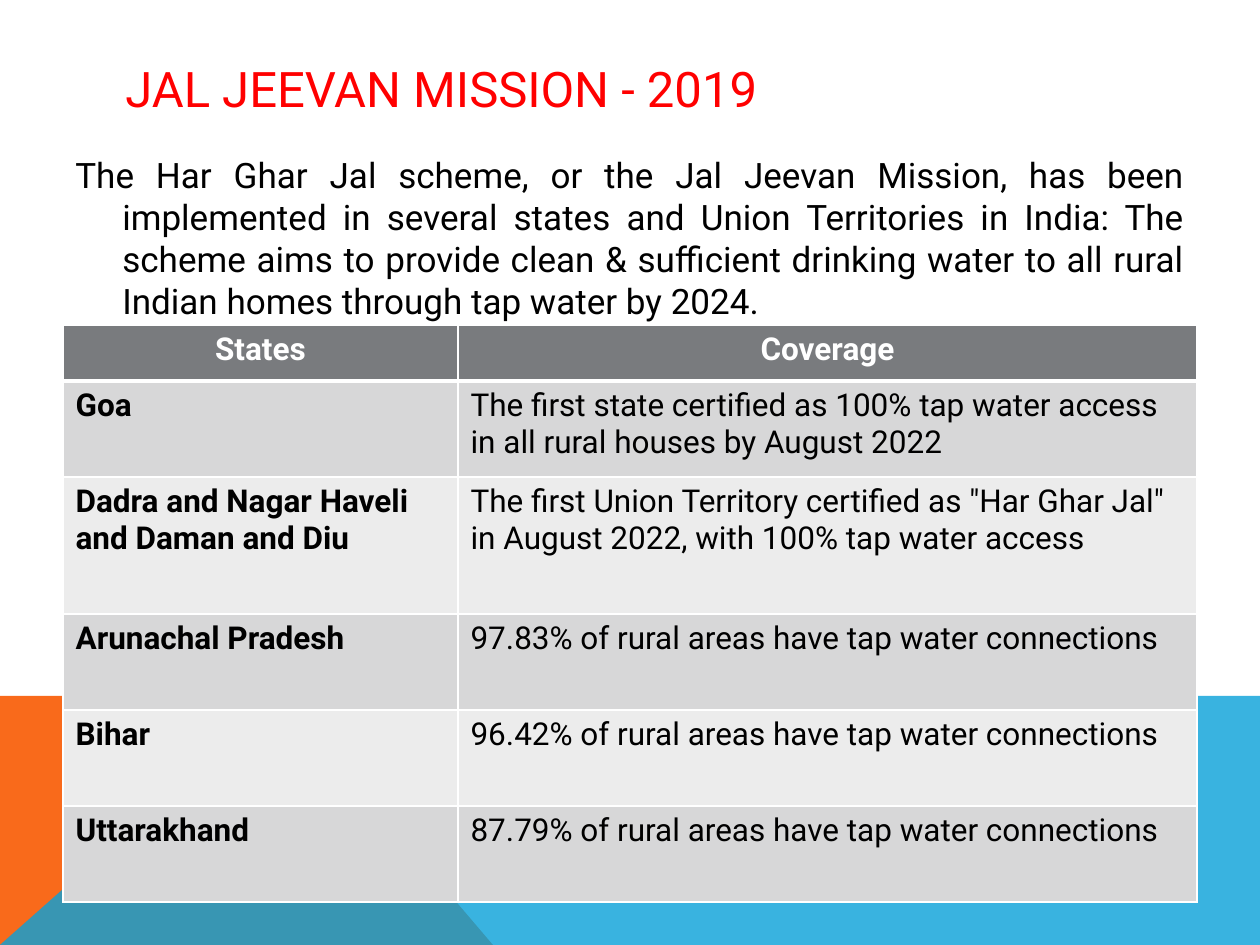
from lxml import etree
from pptx import Presentation
from pptx import util as u
from pptx.dml.color import RGBColor
from pptx.enum import text
from pptx.oxml.ns import qn

SCALE = 914400 / 126  # EMU per px
FONT = "Roboto"
WHITE, BLACK, RED = "FFFFFF", "000000", "FF0000"
ORANGE, BLUE = "F96A1B", "08A1D9"
HEADER, BAND_DARK, BAND_LIGHT = "797B7E", "D7D7D8", "ECECEC"

INTRO = (
    "The Har Ghar Jal scheme, or the Jal Jeevan Mission, has been implemented "
    "in several states and Union Territories in India: The scheme aims to provide "
    "clean & sufficient drinking water to all rural Indian homes through tap water by 2024."
)
ROWS = [
    ("States", "Coverage"),
    ("Goa", "The first state certified as 100% tap water access in all rural houses by August 2022"),
    ("Dadra and Nagar Haveli and Daman and Diu",
     'The first Union Territory certified as "Har Ghar Jal" in August 2022, with 100% tap water access'),
    ("Arunachal Pradesh", "97.83% of rural areas have tap water connections"),
    ("Bihar", "96.42% of rural areas have tap water connections"),
    ("Uttarakhand", "87.79% of rural areas have tap water connections"),
]
COL_WIDTHS = [395, 739]
ROW_HEIGHTS = [56, 96, 137, 96, 96, 96]


def px(n):
    return u.Emu(round(n * SCALE))


def rgb(color):
    return RGBColor.from_string(color)


def add_run(p, words, size, color, bold=False):
    r = p.add_run()
    r.text = words
    r.font.name = FONT
    r.font.size = u.Pt(size)
    r.font.bold = bold
    r.font.color.rgb = rgb(color)


def add_polygon(s, points, color, opacity=100):
    builder = s.shapes.build_freeform(*points[0], scale=SCALE)
    builder.add_line_segments(points[1:], close=True)
    sp = builder.convert_to_shape()
    sp.shadow.inherit = False
    sp.fill.solid()
    sp.fill.fore_color.rgb = rgb(color)
    sp.line.fill.background()
    if opacity < 100:
        clr = sp._element.spPr.find(qn("a:solidFill"))[0]
        etree.SubElement(clr, qn("a:alpha"), val=str(opacity * 1000))


def add_textbox(s, x, y, w, h, anchor):
    tf = s.shapes.add_textbox(px(x), px(y), px(w), px(h)).text_frame
    tf.word_wrap = True
    tf.vertical_anchor = anchor
    return tf.paragraphs[0]


def set_borders(cell, bottom):
    tc_pr = cell._tc.get_or_add_tcPr()
    for side, width in (("L", 1), ("R", 1), ("T", 1), ("B", bottom)):
        ln = etree.SubElement(tc_pr, qn(f"a:ln{side}"), w=str(u.Pt(width)))
        fill = etree.SubElement(ln, qn("a:solidFill"))
        etree.SubElement(fill, qn("a:srgbClr"), val=WHITE)


def add_coverage_table(s, x, y):
    table = s.shapes.add_table(
        len(ROWS), len(COL_WIDTHS), px(x), px(y),
        px(sum(COL_WIDTHS)), px(sum(ROW_HEIGHTS))).table
    for col, width in zip(table.columns, COL_WIDTHS):
        col.width = px(width)
    for i, (row, height) in enumerate(zip(table.rows, ROW_HEIGHTS)):
        row.height = px(height)
        is_header = i == 0
        band = HEADER if is_header else BAND_DARK if i % 2 else BAND_LIGHT
        for j, cell in enumerate(row.cells):
            set_borders(cell, bottom=3 if is_header else 1)
            cell.fill.solid()
            cell.fill.fore_color.rgb = rgb(band)
            p = cell.text_frame.paragraphs[0]
            if is_header:
                p.alignment = text.PP_ALIGN.CENTER
            add_run(p, ROWS[i][j], 18, WHITE if is_header else BLACK,
                    bold=is_header or j == 0)


def main():
    prs = Presentation()
    prs.slide_width, prs.slide_height = px(1260), px(945)
    s = prs.slides.add_slide(prs.slide_layouts[6])

    # Coloured band along the bottom
    add_polygon(s, [(0, 945), (0, 696), (281, 696), (493, 945)], ORANGE)
    add_polygon(s, [(0, 945), (281, 696), (1260, 696), (1260, 945)], BLUE, opacity=80)

    # Title
    p = add_textbox(s, 113, 50, 1036, 76, text.MSO_ANCHOR.MIDDLE)
    add_run(p, "JAL JEEVAN MISSION - 2019", 28, RED)

    # Introduction with a hanging indent, ending just above the table
    p = add_textbox(s, 63, 147, 1134, 178, text.MSO_ANCHOR.TOP)
    p.alignment = text.PP_ALIGN.JUSTIFY
    p.line_spacing = 1.0
    p_pr = p._p.get_or_add_pPr()
    p_pr.set("marL", str(px(47)))
    p_pr.set("indent", str(px(-47)))
    add_run(p, INTRO, 20, BLACK)

    # Coverage by state
    add_coverage_table(s, 63, 325)

    prs.save("out.pptx")


if __name__ == "__main__":
    main()
